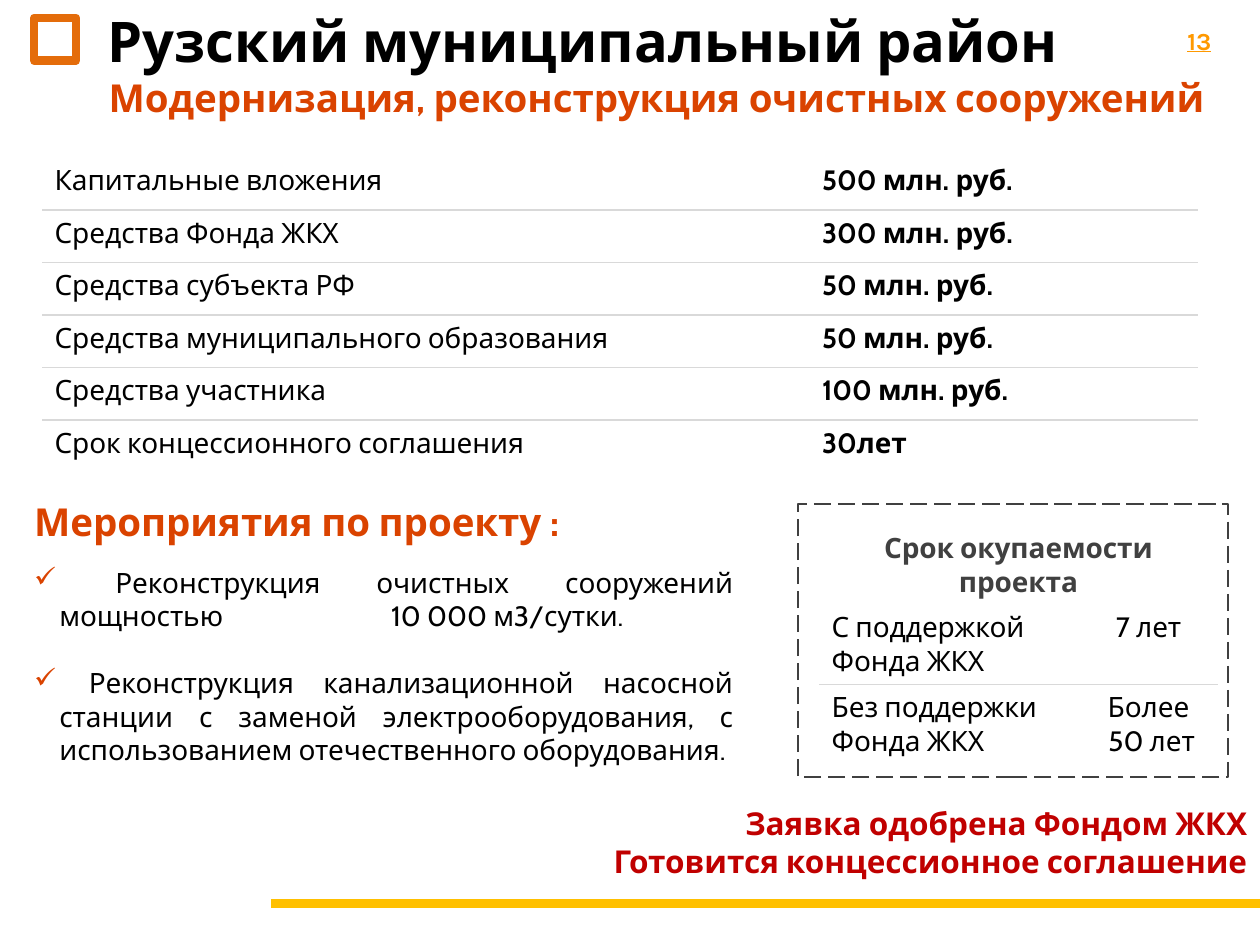
from dataclasses import dataclass
from typing import Optional

from lxml.etree import SubElement
from pptx import Presentation
from pptx.dml.color import RGBColor
from pptx.enum.dml import MSO_LINE
from pptx.enum.shapes import MSO_CONNECTOR, MSO_SHAPE
from pptx.enum.text import MSO_AUTO_SIZE, PP_ALIGN
from pptx.oxml.ns import qn
from pptx.util import Pt

ORANGE = "DA4300"
GRAY = "404040"
RULE = "D9D9D9"


@dataclass(frozen=True)
class Style:
    size: float = 16
    color: str = "000000"
    bold: bool = False
    underline: bool = False
    font: str = "Cabin"


@dataclass(frozen=True)
class Line:
    text: str
    style: Style = Style()
    align: Optional[PP_ALIGN] = None
    before: float = 0
    bullet: str = ""
    tab: float = 0


@dataclass(frozen=True)
class Box:
    left: float
    top: float
    width: float
    height: float

    def emu(self) -> tuple:
        return Pt(self.left), Pt(self.top), Pt(self.width), Pt(self.height)


def rgb(color: str) -> RGBColor:
    return RGBColor.from_string(color)


def add_bullet(paragraph, line: Line) -> None:
    properties = paragraph._p.get_or_add_pPr()
    properties.set("marL", str(Pt(14.4)))
    properties.set("indent", str(Pt(-14.4)))
    color = SubElement(properties, qn("a:buClr"))
    SubElement(color, qn("a:srgbClr"), val=ORANGE)
    SubElement(properties, qn("a:buChar"), char=line.bullet)
    if line.tab:
        tabs = SubElement(properties, qn("a:tabLst"))
        SubElement(tabs, qn("a:tab"), pos=str(Pt(line.tab)), algn="l")


def write(frame, lines: list[Line]) -> None:
    for index, line in enumerate(lines):
        paragraph = frame.add_paragraph() if index else frame.paragraphs[0]
        paragraph.alignment = line.align
        if line.before:
            paragraph.space_before = Pt(line.before)
        if line.bullet:
            add_bullet(paragraph, line)
        run = paragraph.add_run()
        run.text = line.text
        font = run.font
        font.name = line.style.font
        font.size = Pt(line.style.size)
        font.bold = line.style.bold
        font.underline = line.style.underline
        font.color.rgb = rgb(line.style.color)


def add_text(slide, box: Box, lines: list[Line], inset: bool = True) -> None:
    frame = slide.shapes.add_textbox(*box.emu()).text_frame
    frame.word_wrap = True
    frame.auto_size = MSO_AUTO_SIZE.SHAPE_TO_FIT_TEXT
    if not inset:
        frame.margin_left = frame.margin_right = 0
        frame.margin_top = frame.margin_bottom = 0
    write(frame, lines)


def add_outline(slide, box: Box, color: str, weight: float, dash=None) -> None:
    outline = slide.shapes.add_shape(MSO_SHAPE.RECTANGLE, *box.emu())
    outline.shadow.inherit = False
    outline.fill.background()
    outline.line.color.rgb = rgb(color)
    outline.line.width = Pt(weight)
    if dash:
        outline.line.dash_style = dash


def add_rule(slide, left: float, right: float, y: float, color: str, weight: float) -> None:
    rule = slide.shapes.add_connector(
        MSO_CONNECTOR.STRAIGHT, Pt(left), Pt(y), Pt(right), Pt(y))
    rule.line.color.rgb = rgb(color)
    rule.line.width = Pt(weight)
    SubElement(rule._element.spPr, qn("a:effectLst"))


def style_cell(cell, ruled_sides: str) -> None:
    properties = cell._tc.get_or_add_tcPr()
    for side in "LRTB":
        border = SubElement(properties, qn(f"a:ln{side}"), w=str(Pt(1)))
        if side in ruled_sides:
            fill = SubElement(border, qn("a:solidFill"))
            SubElement(fill, qn("a:srgbClr"), val=RULE)
        else:
            SubElement(border, qn("a:noFill"))
    cell.fill.background()


def add_grid(slide, box: Box, columns: list[float], heights: list[float],
             rows: list[list[list[Line]]], ruled_after: set[int]) -> None:
    table = slide.shapes.add_table(len(rows), len(columns), *box.emu()).table
    table.first_row = table.horz_banding = False
    for column, width in zip(table.columns, columns):
        column.width = Pt(width)
    for index, (row, height, contents) in enumerate(zip(table.rows, heights, rows)):
        row.height = Pt(height)
        sides = ("T" if index - 1 in ruled_after else "") + ("B" if index in ruled_after else "")
        for cell in row.cells:
            style_cell(cell, sides)
        if len(contents) < len(columns):
            table.cell(index, 0).merge(table.cell(index, len(columns) - 1))
        for cell, lines in zip(row.cells, contents):
            write(cell.text_frame, lines)


def main() -> None:
    presentation = Presentation()
    presentation.slide_width, presentation.slide_height = Pt(720), Pt(540)
    slide = presentation.slides.add_slide(presentation.slide_layouts[6])

    heading = Style(22, ORANGE, bold=True)
    strong = Style(bold=True)
    verdict = Style(18, "C00000", bold=True)
    center, justify, right = PP_ALIGN.CENTER, PP_ALIGN.JUSTIFY, PP_ALIGN.RIGHT

    add_outline(slide, Box(19.5, 10.2, 24, 24.4), "E46C0A", 4.75)
    add_rule(slide, 154.8, 720, 516.2, "FFC000", 5.5)
    add_text(slide, Box(61.4, 3.6, 600, 39),
             [Line("Рузский муниципальный район", Style(32, bold=True))], inset=False)

    add_text(slide, Box(12.4, 281, 414, 163), [
        Line("Мероприятия по проекту :", heading),
        Line(" Реконструкция очистных сооружений мощностью\t10 000 м3/сутки.",
             align=justify, before=12, bullet="✓", tab=204),
        Line(" Реконструкция канализационной насосной станции с заменой "
             "электрооборудования, с использованием отечественного оборудования.",
             align=justify, before=19.2, bullet="✓"),
    ])

    funding = [
        ("Капитальные вложения", "500 млн. руб."),
        ("Средства Фонда ЖКХ", "300 млн. руб."),
        ("Средства субъекта РФ", "50 млн. руб."),
        ("Средства муниципального образования", "50 млн. руб."),
        ("Средства участника", "100 млн. руб."),
        ("Срок концессионного соглашения", "30лет"),
    ]
    add_grid(slide, Box(24, 90, 660.6, 180), [438.6, 222], [30] * len(funding),
             [[[Line(source)], [Line(amount, strong)]] for source, amount in funding],
             set(range(len(funding) - 1)))

    payback = [
        [[Line("Срок окупаемости проекта", Style(color=GRAY, bold=True), center)]],
        [[Line("С поддержкой"), Line("Фонда ЖКХ")], [Line("7 лет", align=center)]],
        [[Line("Без поддержки Фонда ЖКХ")],
         [Line("Более", align=center), Line(" 50 лет", align=center)]],
    ]
    add_grid(slide, Box(468, 300, 228, 127), [148.6, 79.4], [37, 45, 45], payback, {1})

    add_text(slide, Box(55, 39, 681, 34),
             [Line("Модернизация, реконструкция очистных сооружений", heading)])
    add_outline(slide, Box(456, 288, 246, 156), GRAY, 1.25, MSO_LINE.LONG_DASH)
    add_text(slide, Box(234, 456, 486, 51), [
        Line("Заявка одобрена Фондом ЖКХ", verdict, right),
        Line("Готовится концессионное соглашение", verdict, right),
    ])
    add_text(slide, Box(678.5, 14.6, 24, 17),
             [Line("13", Style(14, "FF9900", True, True, "Karla"))], inset=False)

    presentation.save("out.pptx")


if __name__ == "__main__":
    main()
